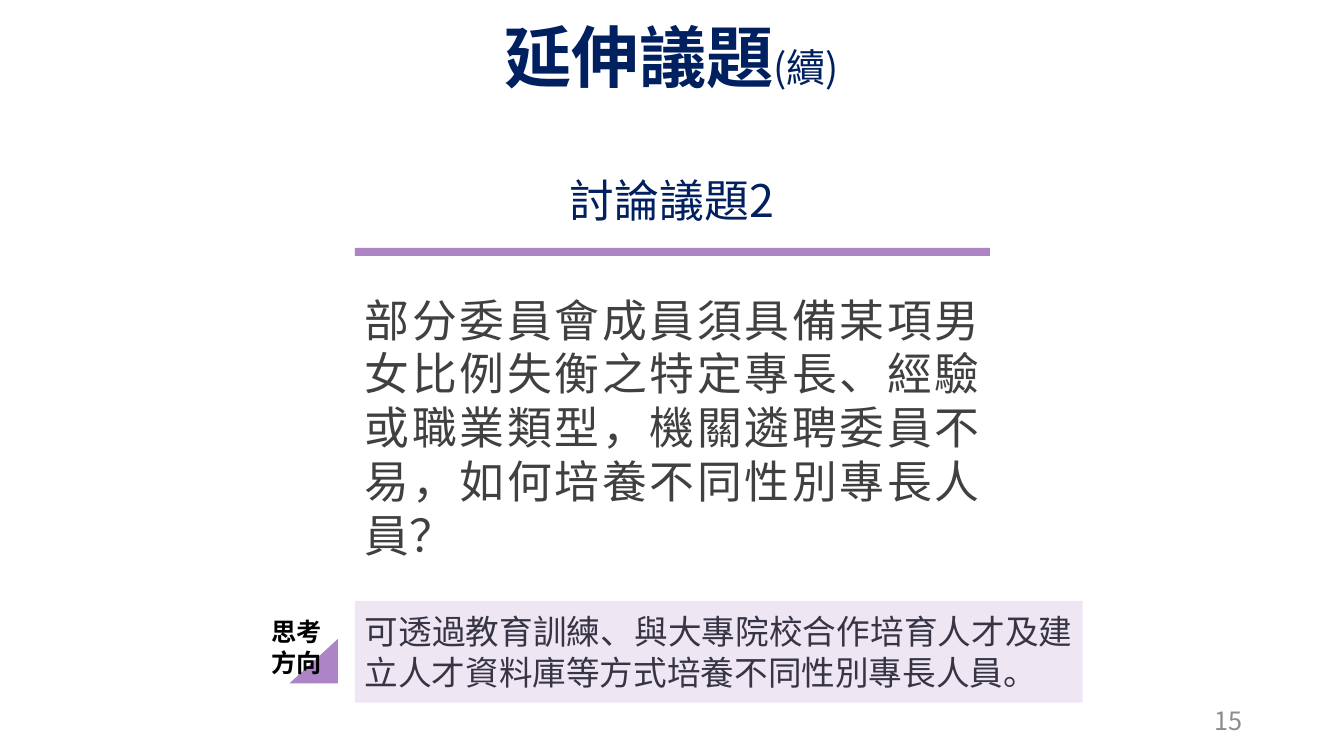
from dataclasses import dataclass
from typing import Optional

from lxml import etree
from pptx import Presentation
from pptx import util as u
from pptx.dml.color import RGBColor
from pptx.enum import shapes, text
from pptx.oxml.ns import qn

COLORS = {
    "navy": "002060",
    "body": "404040",
    "slate": "373545",
    "black": "000000",
    "grey": "8C8C8C",
    "purple": "AD84C6",
    "lilac": "EFE6F4",
}
FONT = "Noto Sans CJK SC"
WIDTH, HEIGHT = u.Inches(13.33), u.Inches(7.5)
LEFT, COLUMN = 26.4, 47.25
CENTER, RIGHT = text.PP_ALIGN.CENTER, text.PP_ALIGN.RIGHT
JUSTIFY = text.PP_ALIGN.JUSTIFY
TOP, MIDDLE = text.MSO_ANCHOR.TOP, text.MSO_ANCHOR.MIDDLE
RECT, TRIANGLE = shapes.MSO_SHAPE.RECTANGLE, shapes.MSO_SHAPE.ISOSCELES_TRIANGLE


@dataclass(frozen=True)
class Area:
    x: float
    y: float
    w: float
    h: float

    def emu(self) -> tuple[int, int, int, int]:
        return (int(WIDTH * self.x / 100), int(HEIGHT * self.y / 100),
                int(WIDTH * self.w / 100), int(HEIGHT * self.h / 100))


@dataclass(frozen=True)
class Run:
    text: str
    size: Optional[int] = None
    bold: Optional[bool] = None


@dataclass(frozen=True)
class Label:
    area: Area
    runs: tuple[Run, ...]
    size: int
    color: str
    align: Optional[text.PP_ALIGN] = None
    anchor: text.MSO_ANCHOR = TOP
    bold: bool = False
    spacing: Optional[float] = None
    fill: Optional[str] = None


@dataclass(frozen=True)
class Block:
    area: Area
    kind: shapes.MSO_SHAPE
    fill: str
    adjustment: Optional[float] = None


BLOCKS = (
    Block(Area(LEFT, 32.8, COLUMN, 1.07), RECT, "purple"),
    Block(Area(21.53, 84.53, 3.6, 5.87), TRIANGLE, "purple", 1),
)
LABELS = (
    Label(Area(0, 2.4, 100, 11.2), (Run("延伸議題", 48, True), Run("(續)", 28, False)),
          48, "navy", CENTER, MIDDLE, spacing=0.9),
    Label(Area(39.9, 22.93, 20.18, 5.6), (Run("討論議題2"),),
          32, "navy", CENTER, spacing=0.9),
    Label(Area(LEFT, 38, COLUMN, 37.2),
          (Run("部分委員會成員須具備某項男女比例失衡之特定專長、經驗或職業類型，"
               "機關遴聘委員不易，如何培養不同性別專長人員？"),),
          32, "body", JUSTIFY),
    Label(Area(LEFT, 79.47, 54.15, 13.47),
          (Run("可透過教育訓練、與大專院校合作培育人才及建立人才資料庫等方式"
               "培養不同性別專長人員。"),),
          24, "slate", JUSTIFY, MIDDLE, fill="lilac"),
    Label(Area(19.43, 80.93, 5.7, 9.47), (Run("思考方向"),), 18, "black", bold=True),
    Label(Area(70.65, 92.67, 22.5, 5.33), (Run("15"),), 18, "grey", RIGHT, MIDDLE),
)


def rgb(name: str) -> RGBColor:
    return RGBColor.from_string(COLORS[name])


def draw_block(s, block: Block) -> None:
    sp = s.shapes.add_shape(block.kind, *block.area.emu())
    sp.shadow.inherit = False
    sp.fill.solid()
    sp.fill.fore_color.rgb = rgb(block.fill)
    sp.line.fill.background()
    if block.adjustment is not None:
        sp.adjustments[0] = block.adjustment


def draw_label(s, label: Label) -> None:
    sp = s.shapes.add_textbox(*label.area.emu())
    if label.fill:
        sp.fill.solid()
        sp.fill.fore_color.rgb = rgb(label.fill)
    tf = sp.text_frame
    tf.word_wrap = True
    tf.vertical_anchor = label.anchor
    p = tf.paragraphs[0]
    p.alignment = label.align
    p.line_spacing = label.spacing
    p.font.name = FONT
    p.font.size = u.Pt(label.size)
    p.font.bold = label.bold
    p.font.color.rgb = rgb(label.color)
    defaults = p._p.pPr.find(qn("a:defRPr"))
    etree.SubElement(defaults, qn("a:ea")).set("typeface", FONT)
    for run in label.runs:
        r = p.add_run()
        r.text = run.text
        if run.size:
            r.font.size = u.Pt(run.size)
        if run.bold is not None:
            r.font.bold = run.bold


def main() -> None:
    prs = Presentation()
    prs.slide_width, prs.slide_height = WIDTH, HEIGHT
    s = prs.slides.add_slide(prs.slide_layouts[6])
    for block in BLOCKS:
        draw_block(s, block)
    for label in LABELS:
        draw_label(s, label)
    prs.save("out.pptx")


if __name__ == "__main__":
    main()
